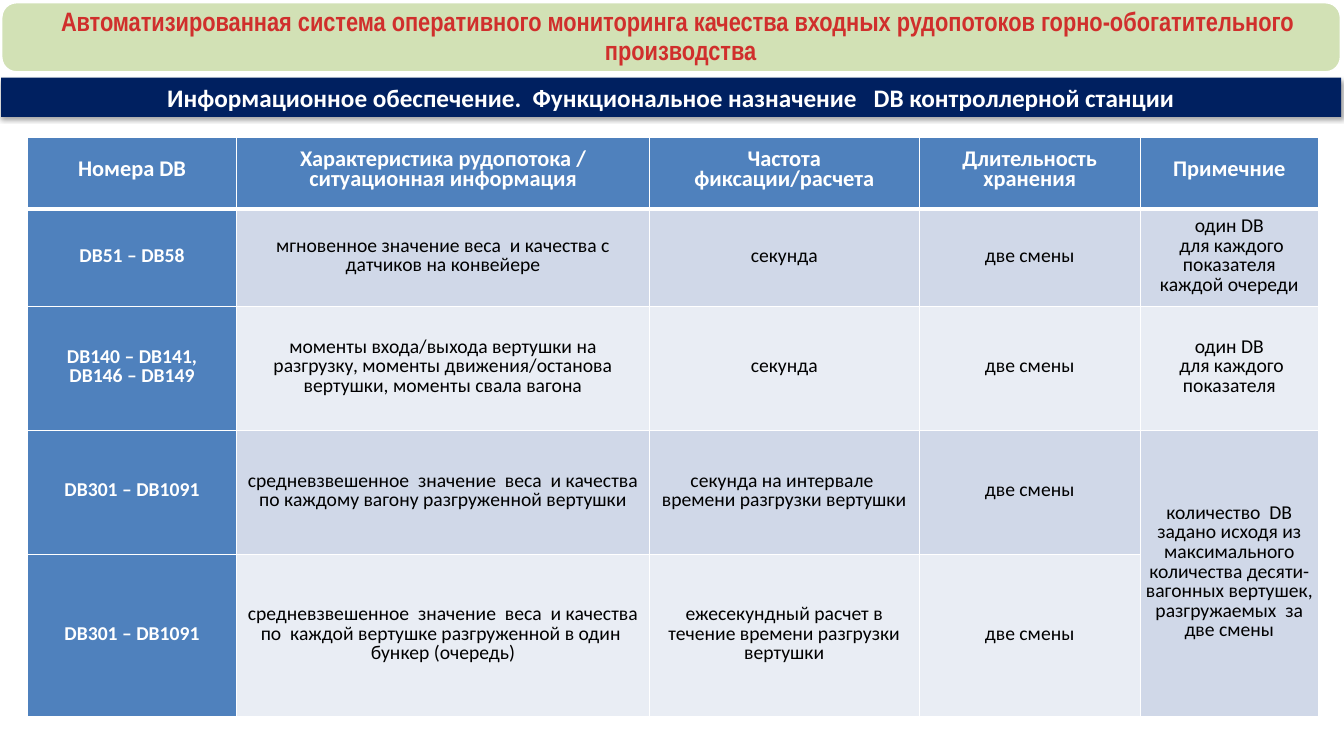
"""Build the slide on the data blocks of the controller station."""
from dataclasses import dataclass

from lxml.etree import SubElement
from pptx import Presentation
from pptx.dml.color import RGBColor
from pptx.enum.shapes import MSO_SHAPE
from pptx.enum.text import MSO_ANCHOR, PP_ALIGN
from pptx.oxml.ns import qn
from pptx.shapes.autoshape import Shape
from pptx.slide import Slide
from pptx.table import Table, _Cell
from pptx.text.text import TextFrame
from pptx.util import Inches, Length, Pt

WHITE = RGBColor(0xFF, 0xFF, 0xFF)
BLACK = RGBColor(0x00, 0x00, 0x00)
NAVY = RGBColor(0x00, 0x20, 0x60)
GREEN = RGBColor(0xD2, 0xE1, 0xB5)
RED = RGBColor(0xD0, 0x2F, 0x2C)
BLUE = RGBColor(0x4F, 0x81, 0xBD)
BANDS = (RGBColor(0xE9, 0xED, 0xF4), RGBColor(0xD0, 0xD8, 0xE8))

SLIDE_WIDTH = Inches(13.33)
SLIDE_HEIGHT = Inches(7.5)
TABLE_LEFT, TABLE_TOP = 2.03, 18.13
COLUMN_SHARES = (15.6, 30.68, 20.1, 16.43, 13.28)
ROW_SHARES = (9.47, 12.93, 16.4, 16.4, 21.47)

ROWS = (
    ("Номера DB", "Характеристика рудопотока /\nситуационная информация",
     "Частота фиксации/расчета", "Длительность хранения", "Примечние"),
    ("DB51 – DB58", "мгновенное значение веса  и качества с датчиков на конвейере",
     "секунда", "две смены", "один DB\n для каждого показателя каждой очереди"),
    ("DB140 – DB141,\nDB146 – DB149",
     "моменты входа/выхода вертушки на разгрузку, моменты движения/останова "
     "вертушки, моменты свала вагона",
     "секунда", "две смены", "один DB\n для каждого показателя"),
    ("DB301 – DB1091",
     "средневзвешенное  значение  веса  и качества по каждому вагону "
     "разгруженной вертушки",
     "секунда на интервале  времени разгрузки вертушки", "две смены",
     "количество  DB задано исходя из максимального количества десяти- "
     "вагонных вертушек, разгружаемых  за две смены"),
    ("DB301 – DB1091",
     "средневзвешенное  значение  веса  и качества по  каждой вертушке "
     "разгруженной в один  бункер (очередь)",
     "ежесекундный расчет в течение времени разгрузки вертушки", "две смены", ""),
)


@dataclass(frozen=True)
class TextStyle:
    font: str
    size: int
    color: RGBColor
    bold: bool
    spacing: float | Length


@dataclass(frozen=True)
class Banner:
    text: str
    top: float
    height: float
    rounding: float
    fill: RGBColor
    style: TextStyle
    margins: tuple[float, float, float, float]
    outlined: bool


SUBTITLE = Banner(
    "Информационное обеспечение.  Функциональное назначение   DB контроллерной станции",
    10.27, 5.2, 0, NAVY, TextStyle("Calibri", 18, WHITE, True, 1.0),
    (0.11, 0.05, 0.11, 0.05), False)
TITLE = Banner(
    "Автоматизированная система оперативного мониторинга качества входных "
    "рудопотоков горно-обогатительного  производства",
    0.27, 9.33, 0.22, GREEN, TextStyle("Arial Narrow", 19, RED, True, 0.9),
    (0.3, 0.11, 0.11, 0.11), True)
HEADER_STYLE = TextStyle("Calibri", 16, WHITE, True, Pt(14))
NUMBER_STYLE = TextStyle("Calibri", 14, WHITE, True, Pt(14))
BODY_STYLE = TextStyle("Calibri", 14, BLACK, False, Pt(14))


def across(percent: float) -> Length:
    return Length(round(SLIDE_WIDTH * percent / 100))


def down(percent: float) -> Length:
    return Length(round(SLIDE_HEIGHT * percent / 100))


def write(frame: TextFrame, text: str, style: TextStyle) -> None:
    frame.text = text
    for para in frame.paragraphs:
        para.alignment = PP_ALIGN.CENTER
        para.line_spacing = style.spacing
        for span in para.runs:
            span.font.name = style.font
            span.font.size = Pt(style.size)
            span.font.bold = style.bold
            span.font.color.rgb = style.color


def add_soft_shadow(box: Shape) -> None:
    effects = box._element.spPr.find(qn("a:effectLst"))
    shadow = SubElement(effects, qn("a:outerShdw"), blurRad=str(Pt(3.1)),
                        dist=str(Pt(1.8)), dir="5400000", rotWithShape="0")
    color = SubElement(shadow, qn("a:srgbClr"), val=str(BLACK))
    SubElement(color, qn("a:alpha"), val="35000")


def draw_banner(page: Slide, banner: Banner) -> None:
    box = page.shapes.add_shape(
        MSO_SHAPE.ROUNDED_RECTANGLE, across(0.08), down(banner.top),
        across(99.7), down(banner.height))
    box.adjustments[0] = banner.rounding
    box.shadow.inherit = False
    box.fill.solid()
    box.fill.fore_color.rgb = banner.fill
    if banner.outlined:
        box.line.color.rgb = WHITE
        box.line.width = Pt(2)
    else:
        box.line.fill.background()
        add_soft_shadow(box)
    frame = box.text_frame
    frame.word_wrap = True
    frame.vertical_anchor = MSO_ANCHOR.MIDDLE
    (frame.margin_left, frame.margin_top, frame.margin_right,
     frame.margin_bottom) = map(Inches, banner.margins)
    write(frame, banner.text, banner.style)


def set_borders(cell: _Cell, row: int) -> None:
    widths = {"lnL": 1, "lnR": 1, "lnT": 3 if row == 1 else 1, "lnB": 3 if row == 0 else 1}
    properties = cell._tc.get_or_add_tcPr()
    for side, width in widths.items():
        line = SubElement(properties, qn(f"a:{side}"), w=str(Pt(width)))
        fill = SubElement(line, qn("a:solidFill"))
        SubElement(fill, qn("a:srgbClr"), val=str(WHITE))


def format_cell(cell: _Cell, row: int, column: int, text: str) -> None:
    set_borders(cell, row)
    cell.fill.solid()
    cell.fill.fore_color.rgb = BLUE if row == 0 or column == 0 else BANDS[row % 2]
    cell.vertical_anchor = MSO_ANCHOR.MIDDLE
    cell.margin_left = cell.margin_right = Inches(0.1)
    cell.margin_top = cell.margin_bottom = 0
    style = HEADER_STYLE if row == 0 else NUMBER_STYLE if column == 0 else BODY_STYLE
    write(cell.text_frame, text, style)


def draw_table(page: Slide) -> Table:
    table = page.shapes.add_table(
        len(ROW_SHARES), len(COLUMN_SHARES), across(TABLE_LEFT), down(TABLE_TOP),
        across(sum(COLUMN_SHARES)), down(sum(ROW_SHARES))).table
    table.horz_banding = False
    for column, share in zip(table.columns, COLUMN_SHARES):
        column.width = across(share)
    for row, share in zip(table.rows, ROW_SHARES):
        row.height = down(share)
    for row, texts in enumerate(ROWS):
        for column, text in enumerate(texts):
            format_cell(table.cell(row, column), row, column, text)
    note = table.cell(3, 4)
    note.merge(table.cell(4, 4))
    note.margin_left = note.margin_right = 0
    return table


def main() -> None:
    deck = Presentation()
    deck.slide_width = SLIDE_WIDTH
    deck.slide_height = SLIDE_HEIGHT
    page = deck.slides.add_slide(deck.slide_layouts[6])
    draw_table(page)
    for banner in (SUBTITLE, TITLE):
        draw_banner(page, banner)
    deck.save("out.pptx")


if __name__ == "__main__":
    main()
